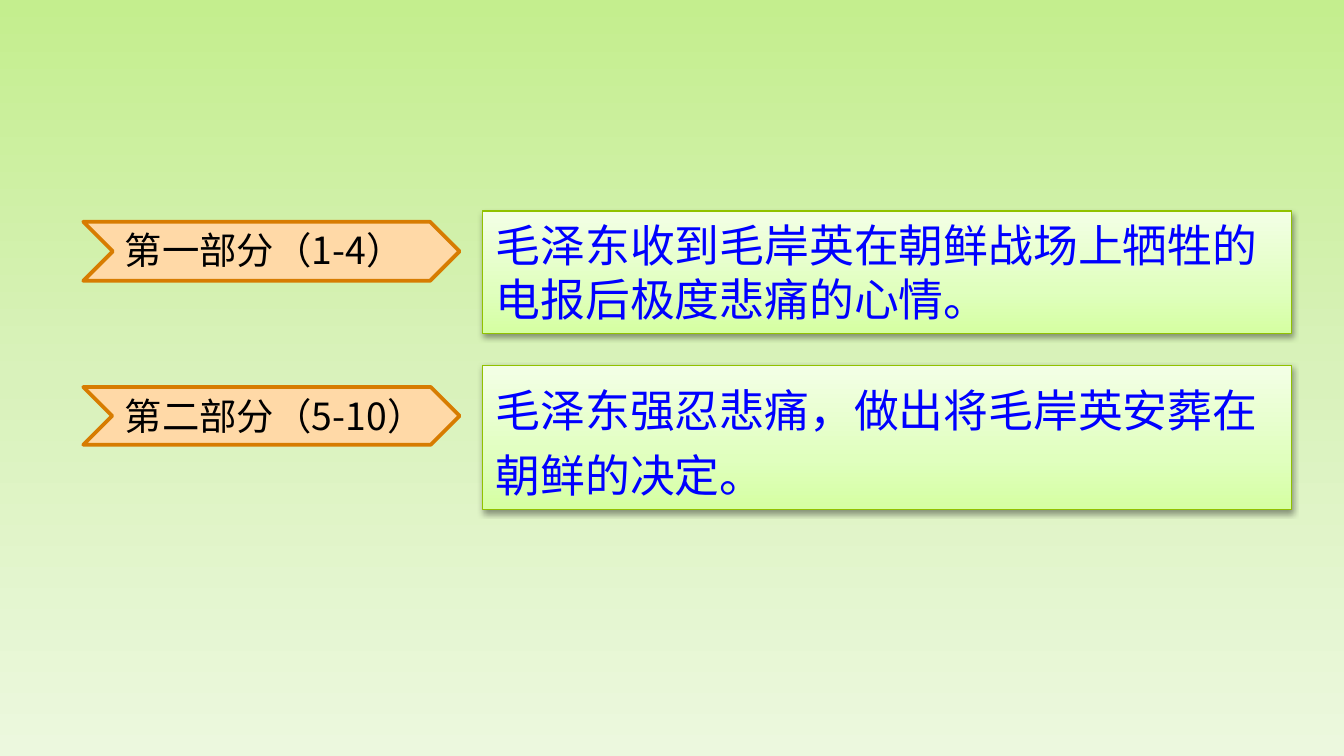
import pptx
import pptx.util
import pptx.dml.color
import pptx.enum.shapes
import pptx.enum.text
import pptx.oxml
import pptx.oxml.ns
from pptx.util import Inches

COLORS = {
    "chevron": "FFD9A7",
    "chevron_line": "D77C01",
    "panel_line": "91C200",
    "label": "000000",
    "summary": "0000FF",
    "shadow": "000000",
}
PAGE_STOPS = [(0, "C4EE8E"), (50, "D9F2BB"), (100, "ECF8DE")]
PANEL_STOPS = [(0, "D5FFA2"), (35, "E0FFBE"), (100, "F3FFE6")]
CJK_FONT = "Noto Sans CJK SC"

# Each part: label, label box, chevron box, summary, panel box, summary line spacing
PARTS = [
    ("第一部分（1-4）", (0.83, 1.54, 2.42, 0.54), (0.62, 1.65, 2.8, 0.44),
     "毛泽东收到毛岸英在朝鲜战场上牺牲的电报后极度悲痛的心情。",
     (3.59, 1.57, 6.02, 0.91), 1.0),
    ("第二部分（5-10）", (0.83, 2.78, 2.76, 0.54), (0.62, 2.88, 2.8, 0.43),
     "毛泽东强忍悲痛，做出将毛岸英安葬在朝鲜的决定。",
     (3.59, 2.72, 6.02, 1.07), 1.2),
]


def rgb(name):
    return pptx.dml.color.RGBColor.from_string(COLORS[name])


def inches(box):
    return [Inches(length) for length in box]


def set_gradient(fill, root, stops, angle):
    """Fill with any number of stops; angle is counter-clockwise degrees."""
    fill.gradient()
    fill.gradient_angle = angle
    stop_list = root.find(".//" + pptx.oxml.ns.qn("a:gsLst"))
    stop_list.clear()
    for position, color in stops:
        stop_list.append(pptx.oxml.parse_xml(
            f'<a:gs {pptx.oxml.ns.nsdecls("a")} pos="{position * 1000}">'
            f'<a:srgbClr val="{color}"/></a:gs>'))


def add_shadow(shape):
    effects = shape._element.spPr.find(pptx.oxml.ns.qn("a:effectLst"))
    effects.append(pptx.oxml.parse_xml(
        f'<a:outerShdw {pptx.oxml.ns.nsdecls("a")} blurRad="{pptx.util.Pt(3.1)}" '
        f'dist="{pptx.util.Pt(1.6)}" dir="5400000" rotWithShape="0">'
        f'<a:srgbClr val="{COLORS["shadow"]}"><a:alpha val="38000"/></a:srgbClr>'
        '</a:outerShdw>'))


def add_outlined(group, kind, box, line_color, line_width):
    shape = group.shapes.add_shape(kind, *inches(box))
    shape.shadow.inherit = False
    shape.line.color.rgb = rgb(line_color)
    shape.line.width = pptx.util.Pt(line_width)
    return shape


def write_text(shape, text, size, color, font, **paragraph_format):
    frame = shape.text_frame
    frame.word_wrap = True
    frame.auto_size = pptx.enum.text.MSO_AUTO_SIZE.SHAPE_TO_FIT_TEXT
    frame.vertical_anchor = pptx.enum.text.MSO_ANCHOR.TOP
    para = frame.paragraphs[0]
    para.alignment = pptx.enum.text.PP_ALIGN.LEFT
    for name, value in paragraph_format.items():
        setattr(para, name, value)
    span = para.add_run()
    span.text = text
    for name, value in {"size": pptx.util.Pt(size), "name": font}.items():
        setattr(span.font, name, value)
    span.font.color.rgb = rgb(color)
    span.font._element.append(pptx.oxml.parse_xml(
        f'<a:ea {pptx.oxml.ns.nsdecls("a")} typeface="{CJK_FONT}"/>'))


def add_label(group, text, text_box, chevron_box):
    chevron = add_outlined(group, pptx.enum.shapes.MSO_SHAPE.CHEVRON,
                           chevron_box, "chevron_line", 2)
    chevron.fill.solid()
    chevron.fill.fore_color.rgb = rgb("chevron")
    label = group.shapes.add_textbox(*inches(text_box))
    write_text(label, text, 20, "label", CJK_FONT,
               line_spacing=1.3, space_before=pptx.util.Pt(6))


def add_summary(group, text, box, line_spacing):
    panel = add_outlined(group, pptx.enum.shapes.MSO_SHAPE.RECTANGLE,
                         box, "panel_line", 0.75)
    set_gradient(panel.fill, panel._element, PANEL_STOPS, 90)
    add_shadow(panel)
    write_text(panel, text, 24, "summary", "Arial", line_spacing=line_spacing)


def main():
    deck = pptx.Presentation()
    deck.slide_width = Inches(10)
    deck.slide_height = deck.slide_width * 9 // 16
    page = deck.slides.add_slide(deck.slide_layouts[6])
    set_gradient(page.background.fill, page._element, PAGE_STOPS, 270)
    for label, label_box, chevron_box, summary, panel_box, spacing in PARTS:
        group = page.shapes.add_group_shape()
        add_label(group, label, label_box, chevron_box)
        add_summary(group, summary, panel_box, spacing)
    deck.save("out.pptx")


if __name__ == "__main__":
    main()
